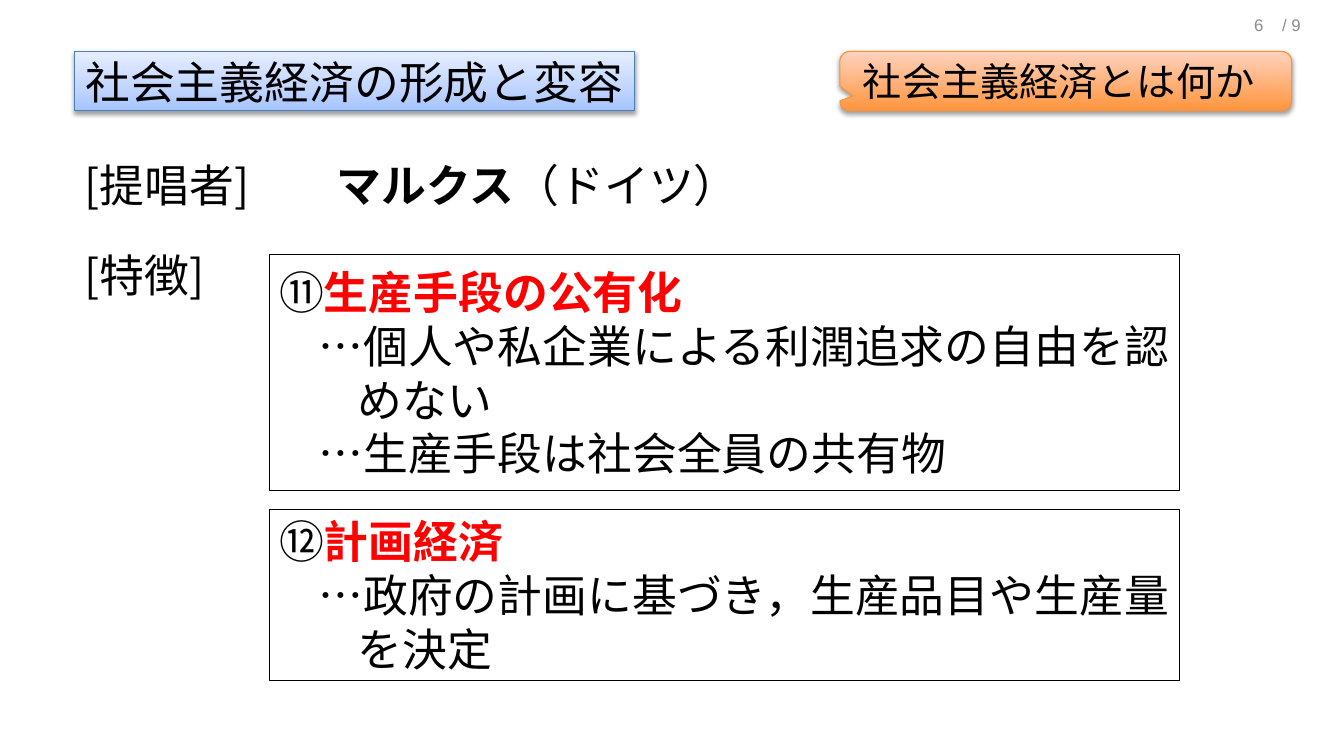
from dataclasses import dataclass

from lxml.etree import SubElement
from pptx import Presentation
from pptx.dml.color import RGBColor
from pptx.enum.shapes import MSO_SHAPE
from pptx.enum.text import MSO_ANCHOR, PP_ALIGN
from pptx.oxml.ns import qn
from pptx.util import Inches, Pt

SLIDE_WIDTH, SLIDE_HEIGHT = Inches(13.33), Inches(7.5)
COLUMNS = ROWS = 100


@dataclass(frozen=True)
class Theme:
    font: str = "Noto Sans CJK JP"
    page_font: str = "Arial"
    body: int = 32
    callout: int = 28
    page: int = 12
    ink: str = "000000"
    key: str = "FF0000"
    paper: str = "FFFFFF"
    grey: str = "8C8C8C"
    blue_line: str = "4B7EBC"
    blues: tuple = ((0, "A4C4FF"), (35, "BFD4FF"), (100, "E6EEFF"))
    orange_line: str = "F69240"
    oranges: tuple = ((0, "FF953E"), (100, "FFD2BD"))


THEME = Theme()


def grid(left, top, width, height):
    """Turn columns and rows of the slide grid into lengths."""
    column, row = SLIDE_WIDTH / COLUMNS, SLIDE_HEIGHT / ROWS
    return [round(n) for n in (left * column, top * row, width * column, height * row)]


def add_run(paragraph, words, size=THEME.body, color=THEME.ink, bold=False, font=THEME.font):
    run = paragraph.add_run()
    run.text = words
    run.font.size = Pt(size)
    run.font.bold = bold
    run.font.name = font
    run.font.color.rgb = RGBColor.from_string(color)
    SubElement(run.font._element, qn("a:ea"), typeface=font)


def add_textbox(slide, place):
    frame = slide.shapes.add_textbox(*grid(*place)).text_frame
    frame.word_wrap = True
    return frame


def add_page_text(slide, place, words):
    frame = add_textbox(slide, place)
    frame.vertical_anchor = MSO_ANCHOR.MIDDLE
    paragraph = frame.paragraphs[0]
    paragraph.alignment = PP_ALIGN.RIGHT
    add_run(paragraph, words, THEME.page, THEME.grey, font=THEME.page_font)


def add_heading(slide, place):
    paragraph = add_textbox(slide, place).paragraphs[0]
    paragraph.line_spacing = Pt(30)
    return paragraph


def add_tab_stop(paragraph, position):
    tabs = SubElement(paragraph._p.get_or_add_pPr(), qn("a:tabLst"))
    SubElement(tabs, qn("a:tab"), pos=str(position), algn="l")


def add_outlined(slide, kind, place, line_color, line_width):
    shape = slide.shapes.add_shape(kind, *grid(*place))
    shape.shadow.inherit = False
    shape.line.color.rgb = RGBColor.from_string(line_color)
    shape.line.width = Pt(line_width)
    shape.text_frame.vertical_anchor = MSO_ANCHOR.MIDDLE
    return shape


def add_color(parent, color):
    return SubElement(parent, qn("a:srgbClr"), val=color)


def add_banner(slide, kind, place, line_color, stops, words, size, align):
    """Add a shape with an upward gradient, a soft shadow and one line of text."""
    banner = add_outlined(slide, kind, place, line_color, 0.75)
    banner.fill.gradient()
    banner.fill.gradient_angle = 90
    properties = banner._element.spPr
    stop_list = properties.find(".//" + qn("a:gsLst"))
    stop_list.clear()
    for percent, color in stops:
        add_color(SubElement(stop_list, qn("a:gs"), pos=str(percent * 1000)), color)
    shadow = SubElement(properties.find(qn("a:effectLst")), qn("a:outerShdw"),
                        blurRad=str(Pt(3.1)), dist=str(Pt(1.7)), dir="5400000", rotWithShape="0")
    SubElement(add_color(shadow, THEME.ink), qn("a:alpha"), val="36000")
    banner.text_frame.word_wrap = False
    paragraph = banner.text_frame.paragraphs[0]
    paragraph.alignment = align
    add_run(paragraph, words, size)
    return banner


def add_feature(slide, top, height, number, term, details):
    """Add a framed box with a numbered key term and hanging explanations."""
    box = add_outlined(slide, MSO_SHAPE.RECTANGLE, (20.03, top, 67.74, height), THEME.ink, 0.5)
    box.fill.solid()
    box.fill.fore_color.rgb = RGBColor.from_string(THEME.paper)
    frame = box.text_frame
    title = frame.paragraphs[0]
    title.alignment = PP_ALIGN.LEFT
    add_run(title, number)
    add_run(title, term, color=THEME.key, bold=True)
    for detail in details:
        paragraph = frame.add_paragraph()
        paragraph.alignment = PP_ALIGN.LEFT
        properties = paragraph._p.get_or_add_pPr()
        properties.set("marL", str(Inches(0.78)))
        properties.set("indent", str(Inches(-0.39)))
        add_run(paragraph, detail)


def main():
    deck = Presentation()
    deck.slide_width, deck.slide_height = SLIDE_WIDTH, SLIDE_HEIGHT
    slide = deck.slides.add_slide(deck.slide_layouts[6])

    add_page_text(slide, (71.42, 1.6, 23.33, 3.47), "6")
    add_page_text(slide, (74.19, 1.47, 23.33, 3.6), "/ 9")

    proposer = add_heading(slide, (5.55, 21.73, 70.89, 8.27))
    add_tab_stop(proposer, Inches(2.5))
    add_run(proposer, "[提唱者]\t")
    add_run(proposer, "マルクス", bold=True)
    add_run(proposer, "（ドイツ）")
    add_run(add_heading(slide, (5.55, 33.6, 13.2, 8.27)), "[特徴]")

    question = add_banner(slide, MSO_SHAPE.ROUNDED_RECTANGULAR_CALLOUT, (62.49, 6.8, 33.61, 7.87),
                          THEME.orange_line, THEME.oranges, "社会主義経済とは何か",
                          THEME.callout, PP_ALIGN.LEFT)
    question.text_frame.margin_left = Inches(0.2)
    for index, value in enumerate((-0.47, 0.25, 0.17)):
        question.adjustments[index] = value

    add_feature(slide, 67.33, 22.67, "⑫", "計画経済",
                ["…政府の計画に基づき，生産品目や生産量を決定"])
    add_feature(slide, 33.6, 31.33, "⑪", "生産手段の公有化",
                ["…個人や私企業による利潤追求の自由を認めない", "…生産手段は社会全員の共有物"])

    add_banner(slide, MSO_SHAPE.RECTANGLE, (5.55, 6.8, 41.64, 7.87), THEME.blue_line,
               THEME.blues, "社会主義経済の形成と変容", THEME.body, PP_ALIGN.CENTER)
    deck.save("out.pptx")


if __name__ == "__main__":
    main()
